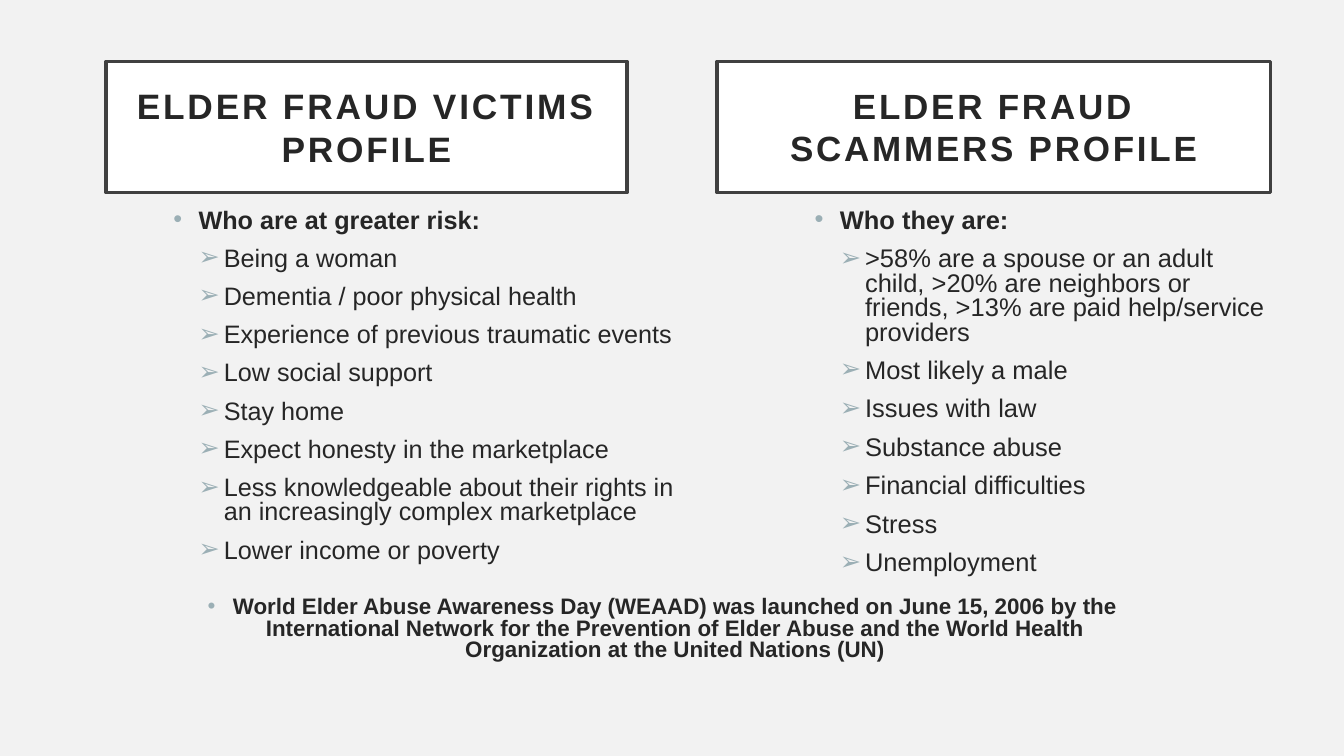
from lxml import etree
from pptx import Presentation
from pptx.dml.color import RGBColor
from pptx.enum.text import MSO_ANCHOR, MSO_AUTO_SIZE, PP_ALIGN
from pptx.oxml.ns import qn
from pptx.util import Inches, Pt

CENTER, LEFT = PP_ALIGN.CENTER, PP_ALIGN.LEFT
MIDDLE, TOP = MSO_ANCHOR.MIDDLE, MSO_ANCHOR.TOP
NO_AUTOFIT = MSO_AUTO_SIZE.NONE
COMPARISON_LAYOUT = 4
INDENT = Inches(0.25)

VICTIM_RISKS = [
    "Being a woman",
    "Dementia / poor physical health",
    "Experience of previous traumatic events",
    "Low social support",
    "Stay home",
    "Expect honesty in the marketplace",
    "Less knowledgeable about their rights in an increasingly complex marketplace",
    "Lower income or poverty",
]
SCAMMER_TRAITS = [
    ">58% are a spouse or an adult child, >20% are neighbors or friends, "
    ">13% are paid help/service providers",
    "Most likely a male",
    "Issues with law",
    "Substance abuse",
    "Financial difficulties",
    "Stress",
    "Unemployment",
]
AWARENESS_NOTE = (
    "World Elder Abuse Awareness Day (WEAAD) was launched on June 15, 2006 by the "
    "International Network for the Prevention of Elder Abuse and the World Health "
    "Organization at the United Nations (UN)"
)


def color(hex_string):
    return RGBColor.from_string(hex_string)


class ProfileSlide:
    """Holds the style and the slide; areas are percentages of the slide's size."""

    font_name = "Arial"
    ink, accent = "262626", "9BAFB5"
    paper, frame, backdrop = "FFFFFF", "404040", "F2F2F2"

    def __init__(self, deck):
        self.deck = deck
        self.page = deck.slides.add_slide(deck.slide_layouts[COMPARISON_LAYOUT])
        fill = self.page.background.fill
        fill.solid()
        fill.fore_color.rgb = color(self.backdrop)

    def place(self, index, area, anchor):
        box = self.page.placeholders[index]
        left, top, width, height = area
        box.left = round(self.deck.slide_width * left / 100)
        box.top = round(self.deck.slide_height * top / 100)
        box.width = round(self.deck.slide_width * width / 100)
        box.height = round(self.deck.slide_height * height / 100)
        frame = box.text_frame
        frame.word_wrap = True
        frame.auto_size = NO_AUTOFIT
        frame.vertical_anchor = anchor
        return box

    def style(self, para, size, bold, align):
        para.alignment = align
        para.font.name = self.font_name
        para.font.size = Pt(size)
        para.font.bold = bold
        para.font.color.rgb = color(self.ink)

    def heading(self, index, area, text, size):
        box = self.place(index, area, MIDDLE)
        box.fill.solid()
        box.fill.fore_color.rgb = color(self.paper)
        box.line.color.rgb = color(self.frame)
        box.line.width = Pt(2.5)
        frame = box.text_frame
        frame.margin_left = frame.margin_right = Inches(0.2)
        frame.margin_top = frame.margin_bottom = Inches(0.2)
        para = frame.paragraphs[0]
        span = para.add_run()
        span.text = text
        span._r.get_or_add_rPr().set("spc", "200")
        para.space_before = Pt(0)
        self.style(para, size, True, CENTER)

    def bullet(self, para, mark, level):
        para.level = level
        properties = para._p.get_or_add_pPr()
        properties.set("marL", str(INDENT * (level + 1)))
        properties.set("indent", str(-INDENT))
        tint = etree.SubElement(properties, qn("a:buClr"))
        etree.SubElement(tint, qn("a:srgbClr"), val=self.accent)
        etree.SubElement(properties, qn("a:buFont"), typeface=self.font_name)
        etree.SubElement(properties, qn("a:buChar"), char=mark)

    def bullets(self, index, area, lead, items, size, align=LEFT):
        frame = self.place(index, area, TOP).text_frame
        for position, text in enumerate([lead, *items]):
            is_lead = position == 0
            para = frame.paragraphs[0] if is_lead else frame.add_paragraph()
            para.add_run().text = text
            self.bullet(para, "•" if is_lead else "➢", 0 if is_lead else 1)
            para.line_spacing = 0.8
            para.space_before = Pt(0 if is_lead else 10)
            self.style(para, size, is_lead, align)


def main():
    deck = Presentation()
    deck.slide_width, deck.slide_height = Inches(13.33), Inches(7.5)
    slide = ProfileSlide(deck)
    slide.heading(0, (7.88, 8.13, 38.78, 17.33), "ELDER FRAUD VICTIMS PROFILE", 25.2)
    slide.heading(3, (53.34, 8.13, 41.19, 17.33), "ELDER FRAUD SCAMMERS PROFILE", 25)
    slide.bullets(2, (12.15, 27.07, 40.14, 32.27), "Who are at greater risk:", VICTIM_RISKS, 18)
    slide.bullets(4, (59.86, 27.07, 36.08, 49.87), "Who they are:", SCAMMER_TRAITS, 18.2)
    slide.bullets(1, (12.23, 78.4, 74.12, 13.2), AWARENESS_NOTE, [], 16, CENTER)
    deck.save("out.pptx")


if __name__ == "__main__":
    main()
